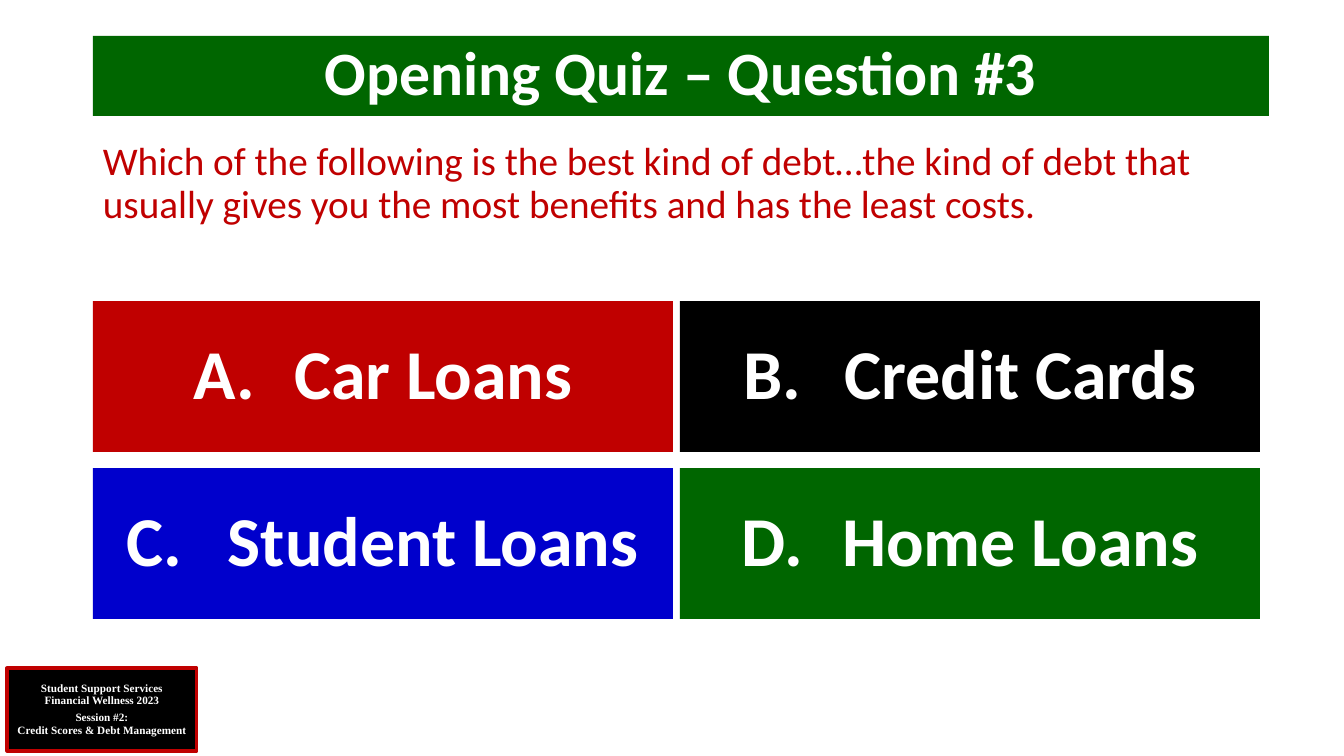
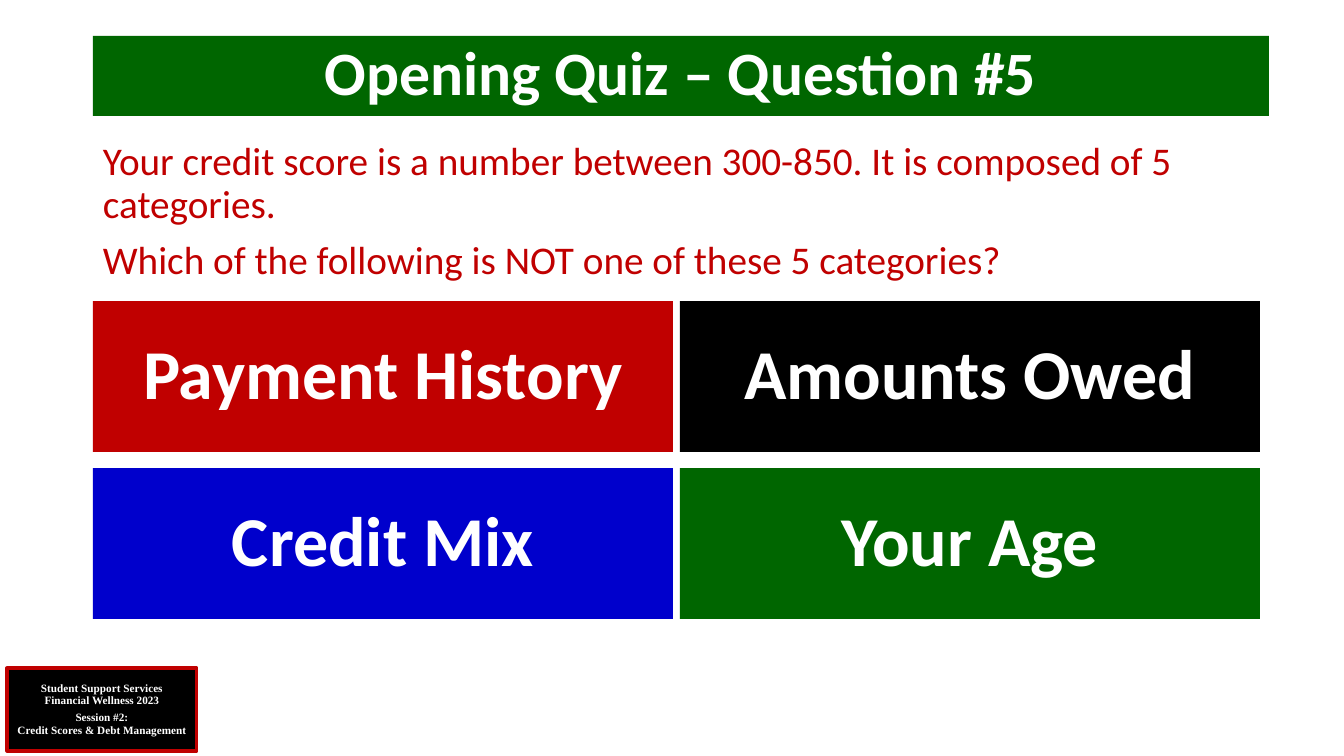
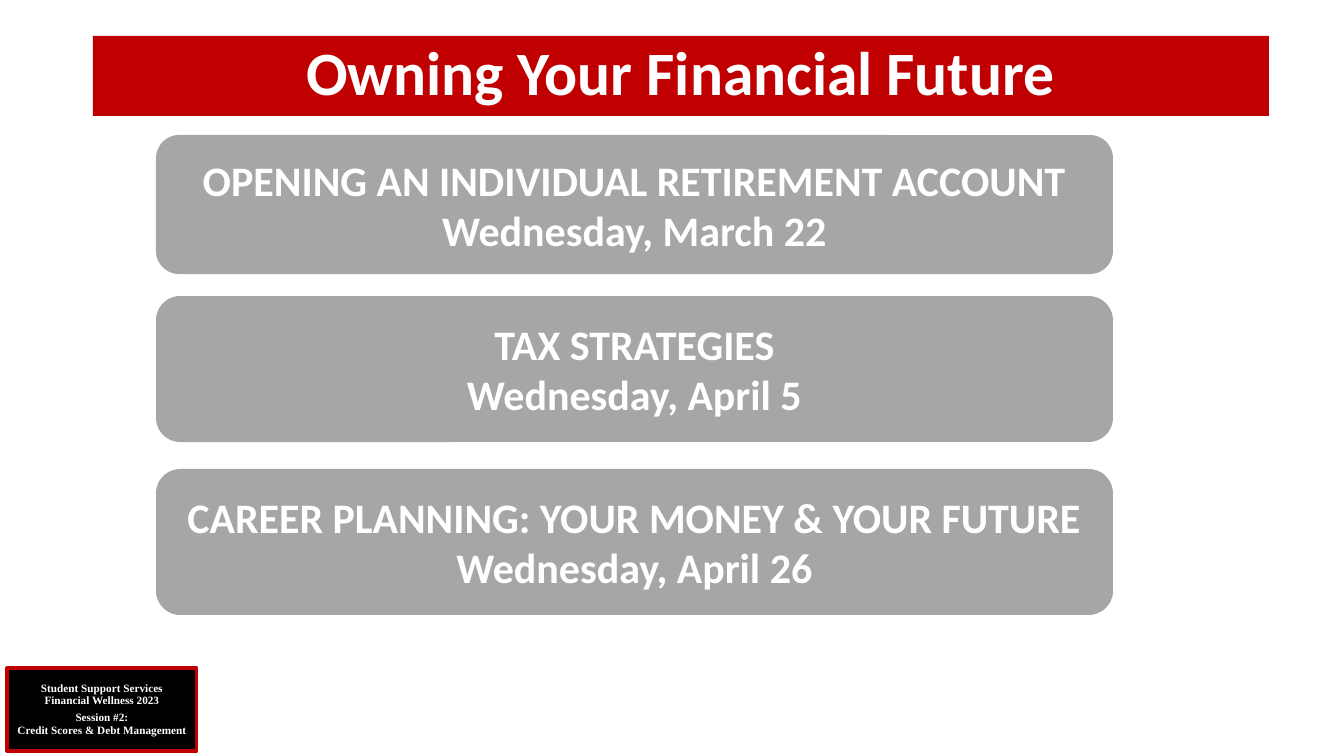
from pptx import Presentation
from pptx.dml.color import RGBColor
from pptx.enum import shapes, text
from pptx.util import Pt

PX = 914400 / 100.8
RED = RGBColor(0xC0, 0x00, 0x00)
GREEN = RGBColor(0x00, 0x66, 0x00)
BLUE = RGBColor(0x00, 0x00, 0xCC)
GRAY = RGBColor(0xA6, 0xA6, 0xA6)
BLACK = RGBColor(0x00, 0x00, 0x00)
WHITE = RGBColor(0xFF, 0xFF, 0xFF)
RECT = shapes.MSO_SHAPE.RECTANGLE
ROUNDED = shapes.MSO_SHAPE.ROUNDED_RECTANGLE

LEFT, BAND_WIDTH = 93, 1176
TILE_WIDTH, TILE_HEIGHT = 580, 151
TILE_TOP, TILE_GAP_X, TILE_GAP_Y = 301, 7, 16
TILE_FILLS = [RED, BLACK, BLUE, GREEN]
FOOTER = ["Student Support Services", "Financial Wellness 2023",
          "Session #2:\vCredit Scores & Debt Management"]


def emu(*lengths):
    return [round(n * PX) for n in lengths]


def add_box(s, kind, place, fill, lines, size, spacing=0.9, font="Calibri"):
    """Add a filled shape with centred bold white lines."""
    sp = s.shapes.add_shape(kind, *emu(*place))
    sp.shadow.inherit = False
    sp.fill.solid()
    sp.fill.fore_color.rgb = fill
    sp.line.fill.background()
    tf = sp.text_frame
    tf.word_wrap = True
    tf.vertical_anchor = text.MSO_ANCHOR.MIDDLE
    for i, line in enumerate(lines):
        p = tf.paragraphs[0] if i == 0 else tf.add_paragraph()
        p.text = line
        p.alignment = text.PP_ALIGN.CENTER
        p.line_spacing = spacing
        p.font.name, p.font.size, p.font.bold = font, Pt(size), True
        p.font.color.rgb = WHITE
    return sp


prs = Presentation()
prs.slide_width, prs.slide_height = emu(1344, 756)

titles = [("Opening Quiz – Question #3", GREEN),
          ("Opening Quiz – Question #5", GREEN),
          ("Owning Your Financial Future", RED)]
for title, fill in titles:
    s = prs.slides.add_slide(prs.slide_layouts[6])
    sp = add_box(s, RECT, (7, 668, 190, 83), BLACK, FOOTER, 8, font="Times New Roman")
    sp.line.color.rgb = RED
    sp.line.width = Pt(2.25)
    tf = sp.text_frame
    tf.margin_left, tf.margin_right = emu(5, 5)
    tf.paragraphs[-1].space_before = Pt(4)
    add_box(s, RECT, (LEFT, 36, BAND_WIDTH, 80), fill, [title], 44)

# Quiz slides: question lines and four answers, row by row
quizzes = [
    (["Which of the following is the best kind of debt…the kind of debt that "
      "usually gives you the most benefits and has the least costs."],
     ["A.\tCar Loans", "B.\tCredit Cards", "C.\tStudent Loans", "D.\tHome Loans"]),
    (["Your credit score is a number between 300-850. It is composed of 5 categories.",
      "Which of the following is NOT one of these 5 categories?"],
     ["Payment History", "Amounts Owed", "Credit Mix", "Your Age"]),
]
for s, (question, answers) in zip(prs.slides, quizzes):
    tf = s.shapes.add_textbox(*emu(LEFT, 137, BAND_WIDTH, 160)).text_frame
    tf.word_wrap = True
    for i, line in enumerate(question):
        p = tf.paragraphs[0] if i == 0 else tf.add_paragraph()
        p.text = line
        p.line_spacing = 0.9
        p.space_before = Pt(10 if i else 0)
        p.font.name, p.font.size = "Calibri", Pt(28)
        p.font.color.rgb = RED
    for i, (answer, fill) in enumerate(zip(answers, TILE_FILLS)):
        row, col = divmod(i, 2)
        x = LEFT + col * (TILE_WIDTH + TILE_GAP_X)
        y = TILE_TOP + row * (TILE_HEIGHT + TILE_GAP_Y)
        add_box(s, RECT, (x, y, TILE_WIDTH, TILE_HEIGHT), fill, [answer], 50)

# Upcoming sessions
sessions = [
    (135, 139, "OPENING AN INDIVIDUAL RETIREMENT ACCOUNT", "Wednesday, March 22"),
    (296, 146, "TAX STRATEGIES", "Wednesday, April 5"),
    (469, 146, "CAREER PLANNING: YOUR MONEY & YOUR FUTURE", "Wednesday, April 26"),
]
for y, h, topic, date in sessions:
    add_box(prs.slides[2], ROUNDED, (156, y, 957, h), GRAY, [topic, date], 30, spacing=1.0)

prs.save("out.pptx")
